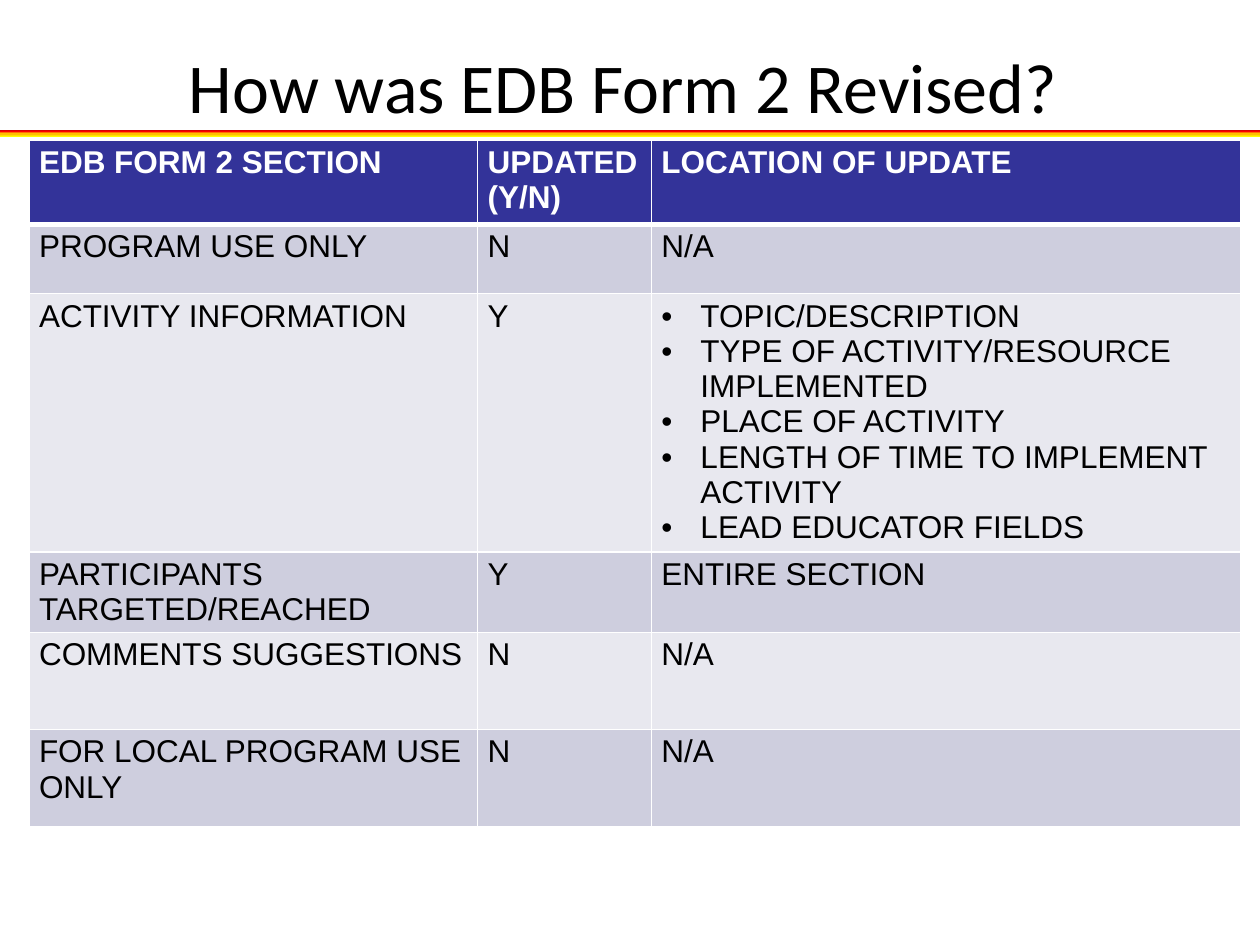
from pptx import Presentation
from pptx import util as u
from pptx.dml import color
from pptx.enum import shapes, text
from pptx.oxml import ns
from lxml import etree

INK = {
    "black": "000000", "white": "FFFFFF", "head": "333399",
    "dark": "CECEDE", "light": "E8E8EF",
}
STOPS = [(0, "C00000"), (30, "FF0000"), (54, "FFC000"), (84, "FFC000"), (100, "FFFF00")]
COLS = [3.56, 1.38, 4.68]
ROWS = [
    (0.67, ["EDB FORM 2 SECTION", "UPDATED (Y/N)", "LOCATION OF UPDATE"]),
    (0.55, ["PROGRAM USE ONLY", "N", "N/A"]),
    (2.05, ["ACTIVITY INFORMATION", "Y", [
        "TOPIC/DESCRIPTION",
        "TYPE OF ACTIVITY/RESOURCE IMPLEMENTED",
        "PLACE OF ACTIVITY",
        "LENGTH OF TIME TO IMPLEMENT ACTIVITY",
        "LEAD EDUCATOR FIELDS",
    ]]),
    (0.64, ["PARTICIPANTS TARGETED/REACHED", "Y", "ENTIRE SECTION"]),
    (0.77, ["COMMENTS SUGGESTIONS", "N", "N/A"]),
    (0.77, ["FOR LOCAL PROGRAM USE ONLY", "N", "N/A"]),
]


def style(para, face, size, ink, bold=False):
    font = para.font
    font.name, font.size, font.bold = face, u.Pt(size), bold
    font.color.rgb = color.RGBColor.from_string(INK[ink])


def bullet(para):
    props = para._p.get_or_add_pPr()
    props.set("marL", str(u.Inches(0.31)))
    props.set("indent", str(u.Inches(-0.31)))
    etree.SubElement(props, ns.qn("a:buFont")).set("typeface", "Arial")
    etree.SubElement(props, ns.qn("a:buChar")).set("char", "•")


deck = Presentation()
deck.slide_width, deck.slide_height = u.Inches(10), u.Inches(7.5)
slide = deck.slides.add_slide(deck.slide_layouts[5])

bar = slide.shapes.add_shape(
    shapes.MSO_SHAPE.RECTANGLE, 0, u.Inches(1.03), u.Inches(10), u.Inches(0.05))
bar.shadow.inherit = False
bar.line.fill.background()
bar.fill.gradient()
bar.fill.gradient_angle = 270
stops = bar._element.spPr.find(".//" + ns.qn("a:gsLst"))
for old in list(stops):
    stops.remove(old)
for place, shade in STOPS:
    stop = etree.SubElement(stops, ns.qn("a:gs"), pos=str(place * 1000))
    etree.SubElement(stop, ns.qn("a:srgbClr"), val=shade)

title = slide.shapes.title
title.left, title.top = u.Inches(0.5), u.Inches(0.28)
title.width, title.height = u.Inches(8.89), u.Inches(0.8)
title.text_frame.text = "How was EDB Form 2 Revised?"
title.text_frame.vertical_anchor = text.MSO_ANCHOR.MIDDLE
head = title.text_frame.paragraphs[0]
head.alignment = text.PP_ALIGN.CENTER
style(head, "Calibri", 40, "black")

table = slide.shapes.add_table(
    len(ROWS), len(COLS), u.Inches(0.23), u.Inches(1.11),
    u.Inches(sum(COLS)), u.Inches(sum(high for high, _ in ROWS))).table
for col, wide in zip(table.columns, COLS):
    col.width = u.Inches(wide)
for r, (high, words) in enumerate(ROWS):
    table.rows[r].height = u.Inches(high)
    fill = "head" if r == 0 else "dark" if r % 2 else "light"
    edges = {"L": 1, "R": 1, "T": 3 if r == 1 else 1, "B": 1 if r else 3}
    for c, word in enumerate(words):
        cell = table.cell(r, c)
        cell.margin_left = cell.margin_right = u.Inches(0.08)
        cell.margin_top = cell.margin_bottom = u.Inches(0.04)
        for side, thick in edges.items():
            edge = etree.SubElement(
                cell._tc.get_or_add_tcPr(), ns.qn("a:ln" + side), w=str(u.Pt(thick)))
            paint = etree.SubElement(edge, ns.qn("a:solidFill"))
            etree.SubElement(paint, ns.qn("a:srgbClr"), val=INK["white"])
        cell.fill.solid()
        cell.fill.fore_color.rgb = color.RGBColor.from_string(INK[fill])
        items = isinstance(word, list)
        cell.text_frame.text = "\n".join(word) if items else word
        for para in cell.text_frame.paragraphs:
            if items:
                bullet(para)
            style(para, "Arial", 18, "black" if r else "white", r == 0)

deck.save("out.pptx")
